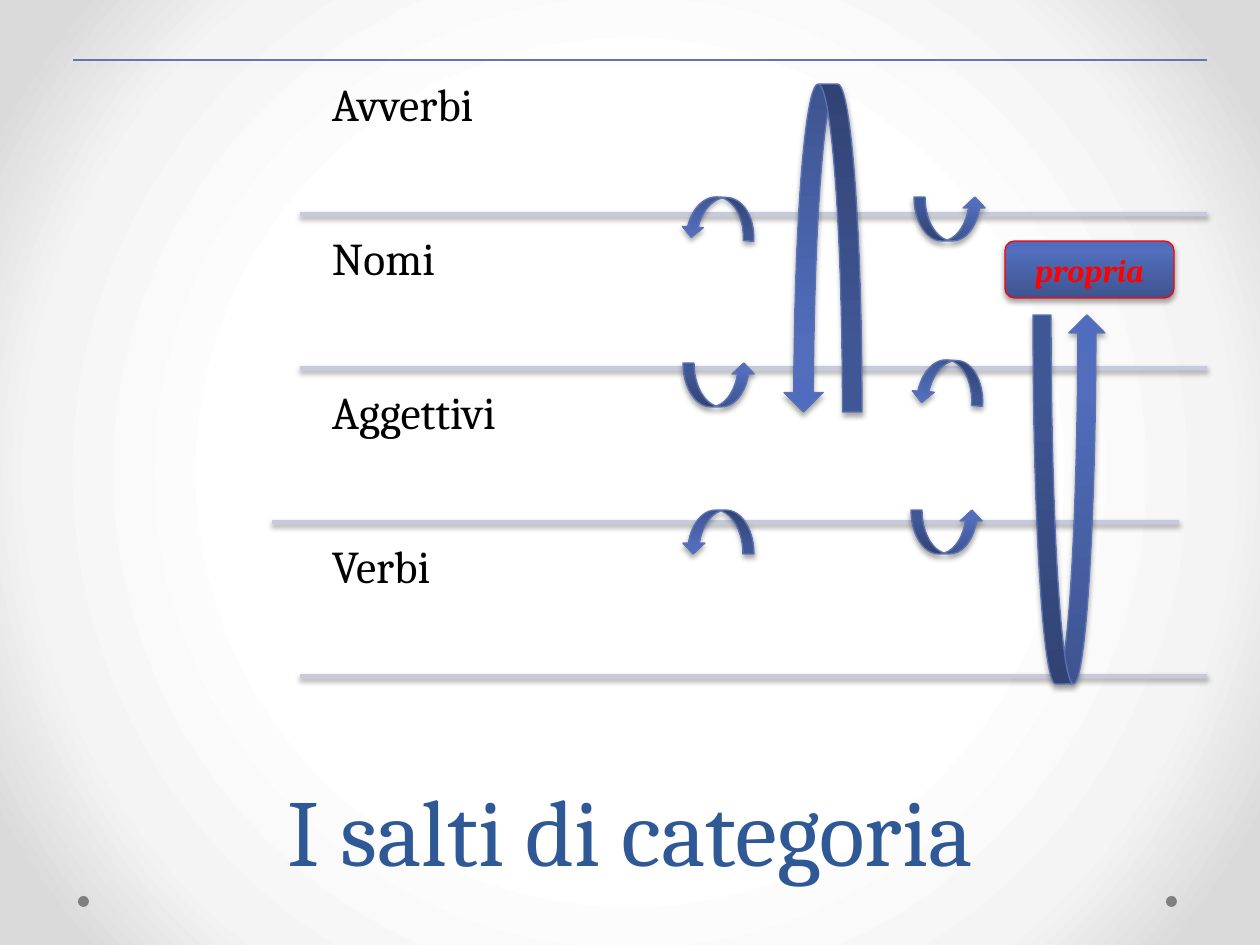
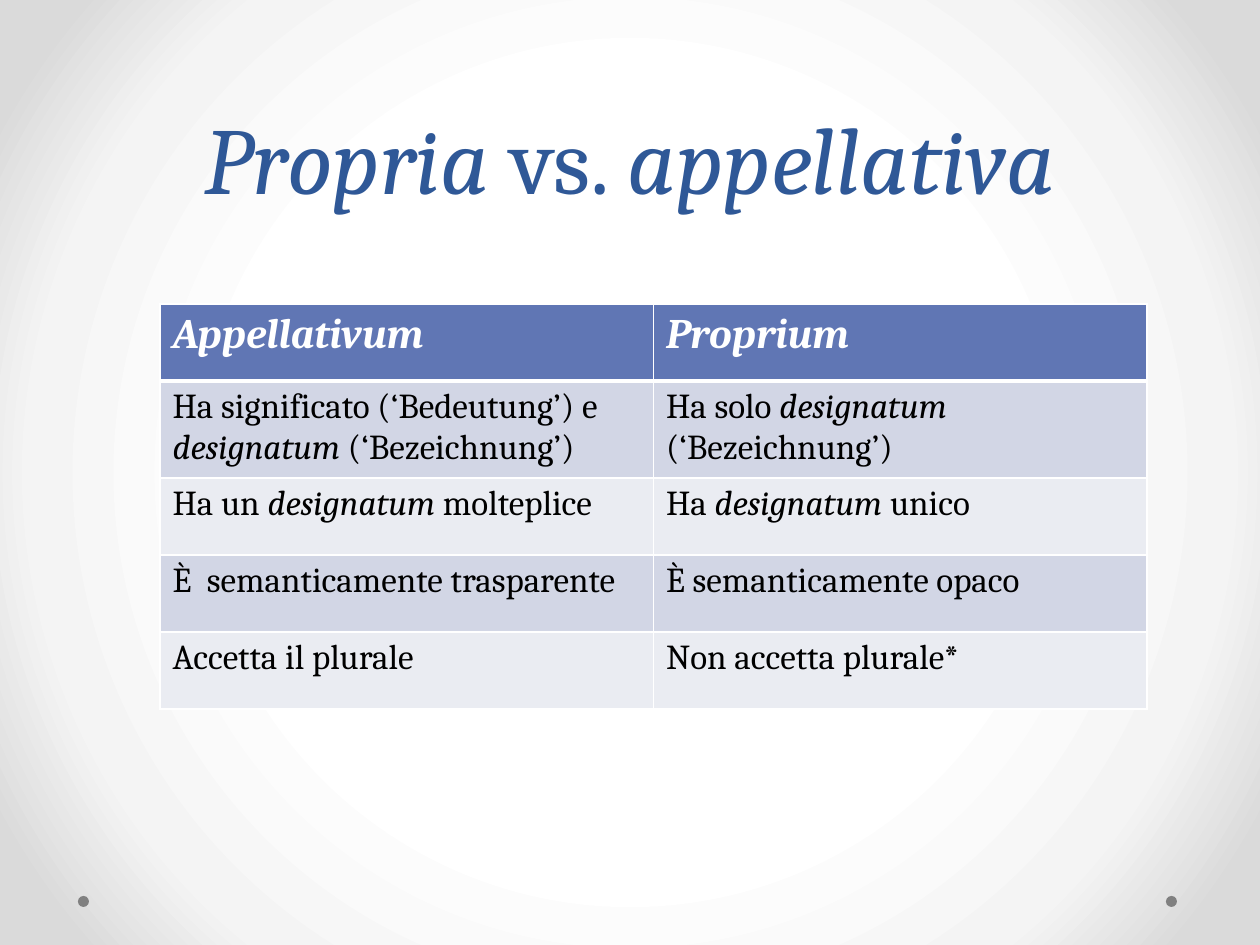
from lxml import etree
from pptx import Presentation
from pptx.dml.color import RGBColor
from pptx.enum.shapes import MSO_CONNECTOR, MSO_SHAPE
from pptx.enum.text import MSO_ANCHOR, PP_ALIGN
from pptx.oxml import parse_xml
from pptx.oxml.ns import nsdecls, qn
from pptx.util import Inches, Pt

PX = Inches(1) // 126
LINE = MSO_CONNECTOR.STRAIGHT
OVAL, ROUNDED, ARROW = MSO_SHAPE.OVAL, MSO_SHAPE.ROUNDED_RECTANGLE, MSO_SHAPE.CURVED_UP_ARROW
TOP, MIDDLE, BOTTOM = MSO_ANCHOR.TOP, MSO_ANCHOR.MIDDLE, MSO_ANCHOR.BOTTOM
CENTER = PP_ALIGN.CENTER
rgb = RGBColor.from_string

BLUE, TITLE_BLUE, PALE, RED = "6076B4", "2F5897", "C5CADE", "FF0000"
WHITE, BLACK, GREY, EDGE = "FFFFFF", "000000", "808080", "5C72B2"
BANDS = ["EAECF2", "D2D6E5"]
FONT = "Cambria"
BG_STOPS = [(50, WHITE), (76, "F4F4F4"), (92, "DADADA")]
BG_SHADE = '<a:path path="circle"><a:fillToRect l="50000" t="50000" r="50000" b="50000"/></a:path>'
ARROW_STOPS = [(0, "3E5490"), (80, "516DBB"), (100, "4F6CBE")]
ARROW_SHADE = '<a:lin ang="16200000" scaled="0"/>'


def set_gradient(parent, stops, shade):
    gs = "".join(f'<a:gs pos="{pos * 1000}"><a:srgbClr val="{color}"/></a:gs>' for pos, color in stops)
    grad = parse_xml(f'<a:gradFill {nsdecls("a")} rotWithShape="1"><a:gsLst>{gs}</a:gsLst>{shade}</a:gradFill>')
    parent.replace(parent.find(qn("a:gradFill")), grad)


def write(tf, text, size, color, bold=False, anchor=TOP, **paragraph):
    tf.word_wrap = True
    tf.vertical_anchor = anchor
    p = tf.paragraphs[0]
    for name, value in paragraph.items():
        setattr(p, name, value)
    for i, part in enumerate(text.split("_")):
        if part:
            r = p.add_run()
            r.text = part
            r.font.color.rgb = rgb(color)
            fmt = {"name": FONT, "size": Pt(size), "bold": bold, "italic": i % 2 == 1}
            for name, value in fmt.items():
                setattr(r.font, name, value)


prs = Presentation()
prs.slide_width, prs.slide_height = Inches(10), Inches(7.5)

slides = []
for title, top, height in [("I salti di categoria", 727, 165), ("_Propria_ vs. _appellativa_", 0, 220)]:
    s = prs.slides.add_slide(prs.slide_layouts[6])
    slides.append(s)
    s.background.fill.gradient()
    set_gradient(s.element.find(".//" + qn("p:bgPr")), BG_STOPS, BG_SHADE)
    for x in (1166, 78):
        sp = s.shapes.add_shape(OVAL, x * PX, 896 * PX, 11 * PX, 11 * PX)
        sp.shadow.inherit = False
        sp.fill.solid()
        sp.fill.fore_color.rgb = rgb(GREY)
        sp.line.fill.background()
    sp = s.shapes.add_textbox(63 * PX, top * PX, 1134 * PX, height * PX)
    write(sp.text_frame, title, 54, TITLE_BLUE, anchor=BOTTOM, alignment=CENTER, line_spacing=Pt(58))

s = slides[0]
shadowed = []
STEP = 154
rules = [(73, 1207, BLUE, 0.75)] + [(x, x + 907, PALE, 2.25) for x in (300, 300, 272, 300)]
for i, (left, right, color, width) in enumerate(rules):
    y = (60 + STEP * i) * PX
    sp = s.shapes.add_connector(LINE, left * PX, y, right * PX, y)
    sp.line.color.rgb = rgb(color)
    sp.line.width = Pt(width)
    shadowed.append(sp)

for i, label in enumerate(["Avverbi", "Nomi", "Aggettivi", "Verbi"]):
    sp = s.shapes.add_textbox(318 * PX, (68 + STEP * i) * PX, 891 * PX, 146 * PX)
    tf = sp.text_frame
    for side in ("left", "top", "right", "bottom"):
        setattr(tf, f"margin_{side}", 14 * PX)
    write(tf, label, 26, BLACK, line_spacing=0.9)

boxes = [
    (ARROW, 914, 197, 72, 44, 0, EDGE),
    (ARROW, 683, 363, 72, 44, 0, EDGE),
    (ARROW, 911, 510, 72, 44, 0, EDGE),
    (ARROW, 682, 197, 73, 42, 183.5, EDGE),
    (ARROW, 912, 360, 72, 44, 183.6, EDGE),
    (ARROW, 682, 510, 72, 44, 180, EDGE),
    (ARROW, 784, 84, 78, 328, 180, EDGE),
    (ARROW, 1033, 315, 72, 369, 0, EDGE),
    (ROUNDED, 1005, 241, 169, 57, 0, RED),
]
for kind, x, y, w, h, rotation, edge in boxes:
    sp = s.shapes.add_shape(kind, x * PX, y * PX, w * PX, h * PX)
    sp.rotation = rotation
    sp.fill.gradient()
    set_gradient(sp.element.spPr, ARROW_STOPS, ARROW_SHADE)
    sp.line.color.rgb = rgb(edge)
    sp.line.width = Pt(0.75)
    shadowed.append(sp)
    if kind == ROUNDED:
        write(sp.text_frame, "_propria_", 18, RED, bold=True, anchor=MIDDLE, alignment=CENTER)

for sp in shadowed:
    effects = etree.SubElement(sp.element.spPr, qn("a:effectLst"))
    effects.append(parse_xml(
        f'<a:outerShdw {nsdecls("a")} blurRad="{Pt(3.1)}" dist="{Pt(1.8)}" dir="5400000" rotWithShape="0">'
        f'<a:srgbClr val="{BLACK}"><a:alpha val="35000"/></a:srgbClr></a:outerShdw>'))

s = slides[1]
rows = [
    ("_Appellativum_", "_Proprium_"),
    ("Ha significato (‘Bedeutung’) e _designatum_ (‘Bezeichnung’)", "Ha solo _designatum_ (‘Bezeichnung’)"),
    ("Ha un _designatum _molteplice", "Ha _designatum _unico"),
    ("È  semanticamente trasparente", "È semanticamente opaco"),
    ("Accetta il plurale", "Non accetta plurale*"),
]
heights = [77, 97, 77, 77, 77]
table = s.shapes.add_table(5, 2, 160 * PX, 304 * PX, 987 * PX, sum(heights) * PX).table
for i, (row, height) in enumerate(zip(rows, heights)):
    table.rows[i].height = height * PX
    header = i == 0
    for j, text in enumerate(row):
        cell = table.cell(i, j)
        write(cell.text_frame, text, 24 if header else 20, WHITE if header else BLACK, bold=header)
        cell.fill.solid()
        cell.fill.fore_color.rgb = rgb(BLUE if header else BANDS[i % 2])
        widths = {"lnL": 1, "lnR": 1, "lnT": 3 if i == 1 else 1, "lnB": 3 if header else 1}
        tcPr = cell._tc.get_or_add_tcPr()
        for k, (tag, width) in enumerate(widths.items()):
            tcPr.insert(k, parse_xml(
                f'<a:{tag} {nsdecls("a")} w="{Pt(width)}"><a:solidFill><a:srgbClr val="{WHITE}"/>'
                f'</a:solidFill></a:{tag}>'))

prs.save("out.pptx")
